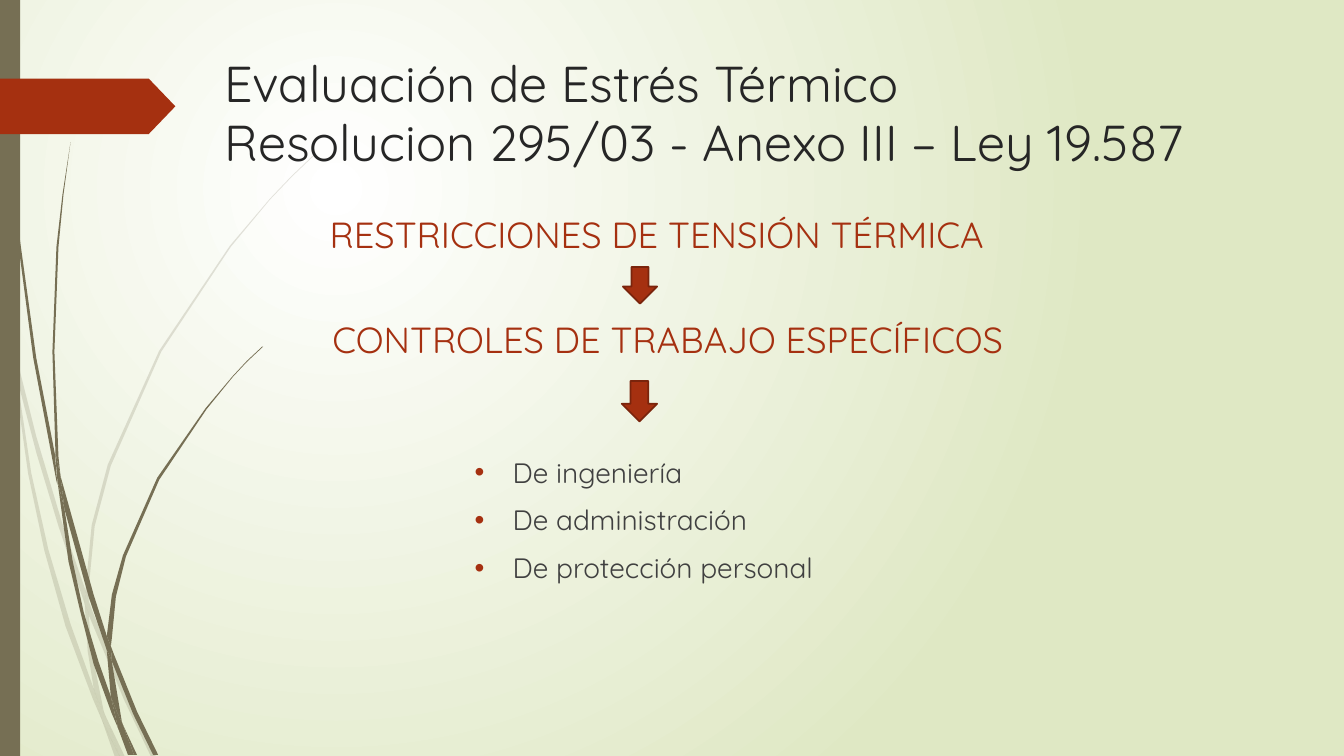
from lxml import etree
from pptx import Presentation
from pptx.dml.color import RGBColor
from pptx.enum.shapes import MSO_SHAPE
from pptx.enum.text import MSO_ANCHOR, PP_ALIGN
from pptx.oxml.ns import qn
from pptx.util import Cm, Pt

RECTANGLE = MSO_SHAPE.RECTANGLE
FLAG = MSO_SHAPE.PENTAGON
DOWN_ARROW = MSO_SHAPE.DOWN_ARROW
TOP = MSO_ANCHOR.TOP
LEFT, CENTER = PP_ALIGN.LEFT, PP_ALIGN.CENTER

FONT = "Quicksand"
COLORS = {
    "white": "FFFFFF", "green": "DFE8C4", "olive": "766F54",
    "red": "A53010", "dark red": "7A240C",
    "title": "262626", "body": "404040",
}

TITLE = "Evaluación de Estrés Térmico\vResolucion 295/03 - Anexo III – Ley 19.587"
CONTROLS = ["De ingeniería", "De administración", "De protección personal"]

# Boxes are left, top, width, height in centimetres.
SLIDE_SIZE = (33.87, 19.05)
TITLE_BOX = (5.41, 1.24, 25.96, 3.56)
CONTROLS_BOX = (11.71, 11.35, 10.16, 4.04)
HEADINGS = [
    ("RESTRICCIONES DE TENSIÓN TÉRMICA", (7.52, 5.36, 18.06, 1.3)),
    ("CONTROLES DE TRABAJO ESPECÍFICOS", (7.8, 8, 18.06, 1.3)),
]
ARROW_BOXES = [(15.7, 6.73, 0.86, 0.92), (15.67, 9.6, 0.89, 1.02)]
BAR_BOX = (0, 0, 0.51, 19.05)
FLAG_BOX = (0, 1.98, 4.42, 1.4)
BULLET_INDENT = 0.96

# Grass outlines on a fine grid: down one edge of the leaf, up the other.
GRASS_UNIT = Cm(2.54) / 100
PALE_GRASS = [
    [(11, 350), (9, 322), (0, 282), (0, 299), (10, 344)],
    [(58, 522), (84, 599), (85, 586), (62, 520), (36, 433), (14, 345), (17, 376),
     (36, 449)],
    [(92, 607), (88, 596), (88, 610), (123, 694), (150, 751), (155, 751), (127, 692)],
    [(119, 751), (124, 751), (105, 711)],
    [(93, 683), (70, 619), (48, 545), (31, 469), (17, 376), (11, 350), (28, 470),
     (44, 546), (65, 621), (92, 693), (101, 714), (99, 707)],
    [(84, 599), (87, 646), (93, 683), (96, 692), (105, 711), (103, 706), (91, 646),
     (88, 610), (88, 608)],
    [(88, 584), (94, 522), (110, 462), (160, 349), (229, 245), (268, 198), (290, 175),
     (312, 154), (312, 153), (289, 175), (268, 197), (228, 244), (158, 348),
     (107, 461), (91, 521), (85, 584), (85, 586), (88, 596)],
    [(101, 714), (114, 751), (119, 751)],
    [(88, 608), (88, 610), (88, 596), (85, 586), (84, 599)],
    [(96, 692), (93, 683), (99, 707), (101, 714), (119, 751), (105, 711)],
]
DARK_GRASS = [
    [(7, 110), (17, 233), (33, 355), (56, 477), (57, 481), (55, 457), (55, 453),
     (36, 355), (19, 232), (8, 109), (5, 48), (4, 0), (3, 0), (4, 48)],
    [(88, 592), (106, 645), (106, 633), (106, 631), (93, 590), (60, 472), (64, 505)],
    [(113, 649), (110, 641), (111, 656), (132, 708), (152, 749), (157, 749), (136, 706)],
    [(110, 691), (98, 657), (83, 607), (72, 556), (64, 505), (57, 477), (68, 557),
     (80, 608), (93, 659), (111, 708), (117, 722), (116, 717)],
    [(60, 472), (58, 453), (54, 349), (58, 245), (63, 193), (70, 141), (62, 193),
     (56, 245), (52, 349), (55, 449)],
    [(133, 749), (136, 749), (122, 719)],
    [(57, 477), (64, 505), (60, 472), (55, 449), (55, 453)],
    [(111, 633), (115, 592), (125, 552), (158, 476), (205, 406), (231, 374), (245, 359),
     (261, 344), (260, 344), (245, 358), (231, 373), (204, 405), (156, 474),
     (122, 551), (111, 590), (106, 631), (110, 641)],
    [(117, 722), (127, 749), (131, 749)],
    [(106, 645), (110, 691), (116, 706), (122, 719), (121, 716), (111, 656), (109, 651)],
    [(106, 645), (109, 651), (111, 656), (110, 641), (106, 631)],
    [(116, 706), (110, 691), (116, 717), (117, 722), (130, 749), (133, 749), (122, 719)],
]


def color(name):
    return RGBColor.from_string(COLORS[name])


def paint(shape, fill, line=None):
    shape.shadow.inherit = False
    shape.fill.solid()
    shape.fill.fore_color.rgb = color(fill)
    if line:
        shape.line.color.rgb = color(line)
        shape.line.width = Pt(1.25)
    else:
        shape.line.fill.background()


def add_leaf(page, outline, opacity):
    builder = page.shapes.build_freeform(*outline[0], scale=GRASS_UNIT)
    builder.add_line_segments(outline[1:], close=True)
    leaf = builder.convert_to_shape()
    paint(leaf, "olive")
    if opacity < 100:
        tint = leaf.fill._xPr.find(".//" + qn("a:srgbClr"))
        etree.SubElement(tint, qn("a:alpha"), val=str(opacity * 1000))


def add_shape(page, kind, box, fill, line=None):
    shape = page.shapes.add_shape(kind, *map(Cm, box))
    paint(shape, fill, line)
    return shape


def add_text(page, text, box, size, ink, align=LEFT):
    frame = page.shapes.add_textbox(*map(Cm, box)).text_frame
    frame.word_wrap = True
    frame.vertical_anchor = TOP
    frame.text = text
    for para in frame.paragraphs:
        para.alignment = align
        for span in para.runs:
            span.font.name = FONT
            span.font.size = Pt(size)
            span.font.color.rgb = color(ink)
    return frame


def add_bullet(para):
    para.space_before = Pt(10)
    props = para._p.get_or_add_pPr()
    props.set("marL", str(Cm(BULLET_INDENT)))
    props.set("indent", str(-Cm(BULLET_INDENT)))
    tint = etree.SubElement(props, qn("a:buClr"))
    etree.SubElement(tint, qn("a:srgbClr"), val=COLORS["red"])
    etree.SubElement(props, qn("a:buFont"), typeface="Arial")
    etree.SubElement(props, qn("a:buChar"), char="•")


def paint_background(page):
    """Radial gradient centred in the upper left quarter."""
    fill = page.background.fill
    fill.gradient()
    for stop, name in zip(fill.gradient_stops, ("white", "green")):
        stop.color.rgb = color(name)
    gradient = page._element.find(".//" + qn("a:gradFill"))
    linear = gradient.find(qn("a:lin"))
    circle = etree.Element(qn("a:path"), {"path": "circle"})
    etree.SubElement(circle, qn("a:fillToRect"),
                     l="50000", t="50000", r="100000", b="100000")
    gradient.replace(linear, circle)


def main():
    deck = Presentation()
    deck.slide_width, deck.slide_height = map(Cm, SLIDE_SIZE)
    page = deck.slides.add_slide(deck.slide_layouts[6])
    paint_background(page)

    for grass, opacity in ((PALE_GRASS, 20), (DARK_GRASS, 100)):
        for outline in grass:
            add_leaf(page, outline, opacity)
    add_shape(page, RECTANGLE, BAR_BOX, "olive")
    flag = add_shape(page, FLAG, FLAG_BOX, "red")
    flag.adjustments[0] = 0.48

    title = add_text(page, TITLE, TITLE_BOX, 36, "title")
    title.paragraphs[0].line_spacing = 0.99
    for text, box in HEADINGS:
        heading = add_text(page, text, box, 25.9, "red", CENTER)
        heading.paragraphs[0].line_spacing = 0.9
    controls = add_text(page, "\n".join(CONTROLS), CONTROLS_BOX, 20, "body")
    for para in controls.paragraphs:
        add_bullet(para)
    for box in ARROW_BOXES:
        add_shape(page, DOWN_ARROW, box, "red", "dark red")

    deck.save("out.pptx")


if __name__ == "__main__":
    main()
